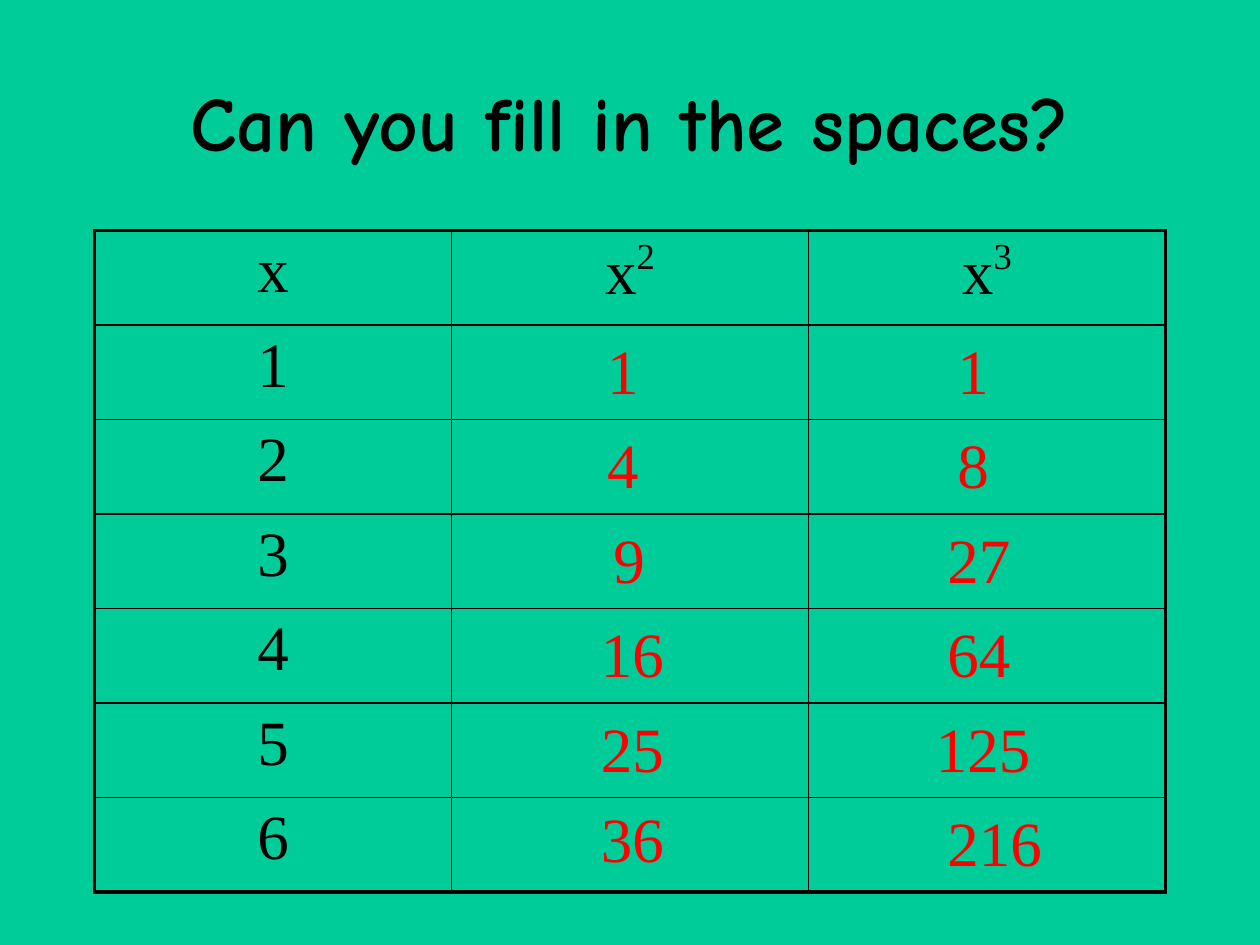
"""Build a slide with a table of squares and cubes and the answers laid over it."""
from lxml.etree import SubElement
from pptx import Presentation
from pptx.dml.color import RGBColor
from pptx.enum.text import MSO_ANCHOR, PP_ALIGN
from pptx.oxml.ns import qn
from pptx.util import Inches, Pt

COLORS = {"background": "00CC99", "ink": "000000", "answer": "FF0000"}
TABLE_LEFT, TABLE_TOP, TABLE_WIDTH, ROW_HEIGHT = 0.75, 1.83, 8.5, 0.75
COLUMNS, ROWS = 3, 7


def write(text_frame, text, size=36, font="Times New Roman", color="ink",
          bold=False, align=PP_ALIGN.LEFT, superscript=""):
    paragraph = text_frame.paragraphs[0]
    paragraph.alignment = align
    for part in filter(None, (text, superscript)):
        run = paragraph.add_run()
        run.text = part
        run.font.size = Pt(size)
        run.font.name = font
        run.font.bold = bold
        run.font.color.rgb = RGBColor.from_string(COLORS[color])
    if superscript:
        run.font._element.set("baseline", "40000")


def draw_border(cell, side, width):
    line = SubElement(cell._tc.get_or_add_tcPr(), qn(f"a:ln{side}"), w=str(Pt(width)))
    fill = SubElement(line, qn("a:solidFill"))
    SubElement(fill, qn("a:srgbClr"), val=COLORS["ink"])


presentation = Presentation()
presentation.slide_width, presentation.slide_height = Inches(10), Inches(7.5)
slide = presentation.slides.add_slide(presentation.slide_layouts[6])
slide.background.fill.solid()
slide.background.fill.fore_color.rgb = RGBColor.from_string(COLORS["background"])

title = slide.shapes.add_textbox(
    Inches(TABLE_LEFT), Inches(0.33), Inches(TABLE_WIDTH), Inches(1.25)).text_frame
title.word_wrap = True
title.vertical_anchor = MSO_ANCHOR.MIDDLE
write(title, "Can you fill in the spaces?", size=44, font="Comic Neue",
      bold=True, align=PP_ALIGN.CENTER)

table = slide.shapes.add_table(
    ROWS, COLUMNS, Inches(TABLE_LEFT), Inches(TABLE_TOP),
    Inches(TABLE_WIDTH), Inches(ROW_HEIGHT * ROWS)).table
table.first_row = table.horz_banding = False

for row in range(ROWS):
    for column in range(COLUMNS):
        cell = table.cell(row, column)
        outer_sides = {"L": column == 0, "R": column == COLUMNS - 1,
                       "T": row == 0, "B": row == ROWS - 1}
        for side, is_outer in outer_sides.items():
            draw_border(cell, side, 2.25 if is_outer else 1)
        cell.fill.background()

for column, power in enumerate(("", "2", "3")):
    write(table.cell(0, column).text_frame, "x", superscript=power, align=PP_ALIGN.CENTER)
for number in range(1, ROWS):
    write(table.cell(number, 0).text_frame, str(number), align=PP_ALIGN.CENTER)

answer_columns = {
    2: [(4.72, 0.56), (4.72, 0.56), (4.77, 0.56), (4.67, 0.78), (4.67, 0.86), (4.67, 1.08)],
    3: [(7.5, 0.56), (7.5, 0.56), (7.42, 0.83), (7.42, 0.92), (7.33, 1.08), (7.42, 1.08)],
}
for number in range(1, ROWS):
    for power, places in answer_columns.items():
        left, width = places[number - 1]
        top = 6.3 if number ** power == 36 else TABLE_TOP + ROW_HEIGHT * number
        answer = slide.shapes.add_textbox(
            Inches(left), Inches(top), Inches(width), Inches(0.7)).text_frame
        answer.word_wrap = True
        write(answer, str(number ** power), color="answer")

presentation.save("out.pptx")
